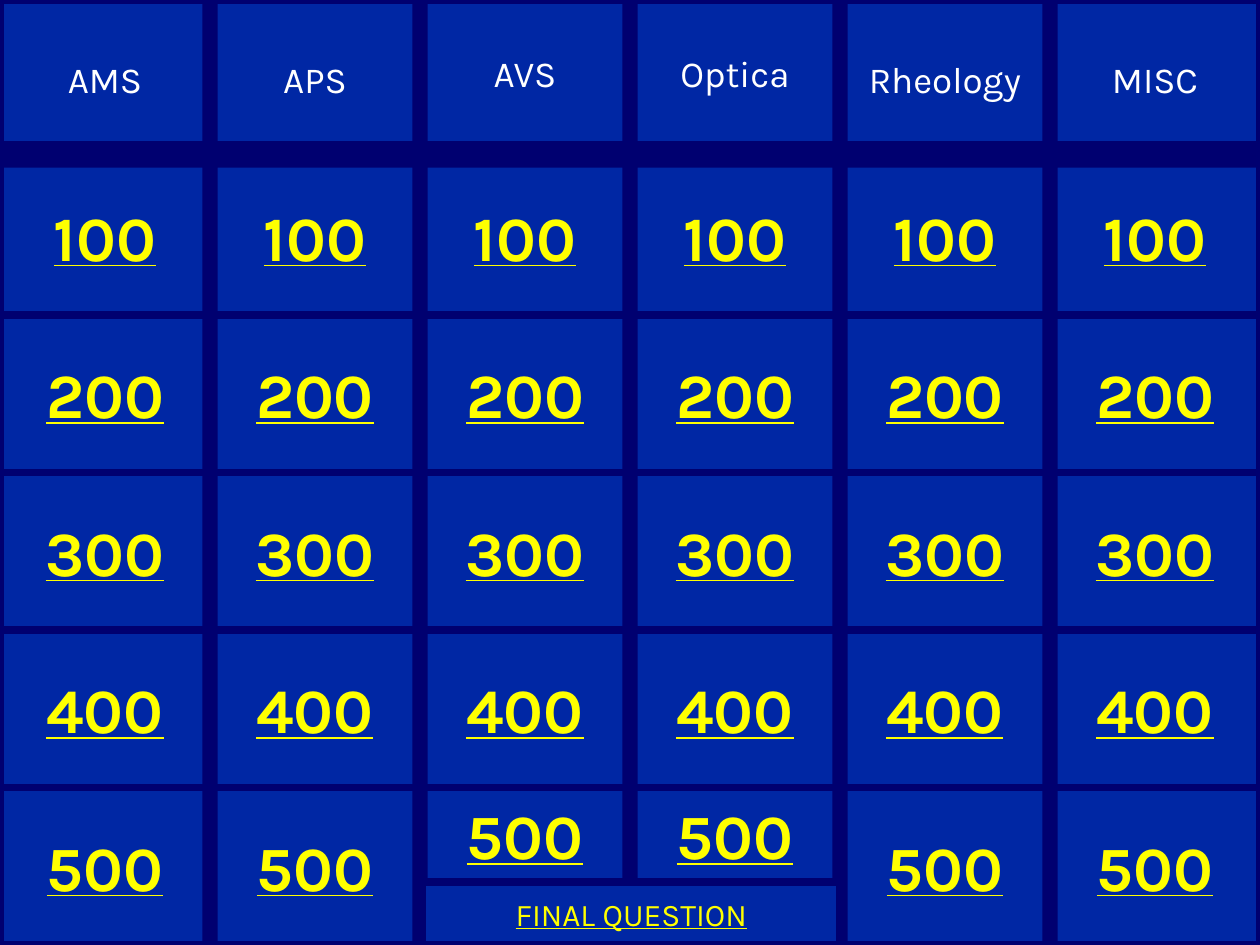
from dataclasses import dataclass

from pptx import Presentation
from pptx.dml.color import RGBColor
from pptx.enum.shapes import MSO_SHAPE as Shape
from pptx.enum.text import MSO_ANCHOR as Anchor, PP_ALIGN as Align
from pptx.util import Inches, Pt


@dataclass(frozen=True)
class Theme:
    background: str = "101C8A"
    tile: str = "0027A4"
    divider: str = "000070"
    heading: str = "FFFFFF"
    points: str = "FFFF00"
    font: str = "Karla"
    heading_size: int = 21
    points_size: int = 36
    final_size: int = 18
    border: float = 4.5


THEME = Theme()
WIDTH, HEIGHT = 10, 7.5
CATEGORIES = ["AMS", "APS", "AVS", "Optica", "Rheology", "MISC"]
POINTS = [100, 200, 300, 400, 500]
COLUMN = WIDTH / len(CATEGORIES)
ROW = HEIGHT / (len(POINTS) + 1)
FINAL_COLUMNS = (2, 3)
FINAL_HEIGHT = 0.5
HEADING_HEIGHTS = {2: 1.15, 3: 1.16}
GAP = 0.12

HEADING = {"size": Pt(THEME.heading_size), "bold": False, "underline": False}
POINTS_LINK = {"size": Pt(THEME.points_size), "bold": True, "underline": True}
FINAL_LINK = {"size": Pt(THEME.final_size), "bold": False, "underline": True}


def color(value):
    return RGBColor.from_string(value)


def add_block(slide, kind, box, fill, border=None):
    shape = slide.shapes.add_shape(kind, *(Inches(length) for length in box))
    shape.shadow.inherit = False
    shape.fill.solid()
    shape.fill.fore_color.rgb = color(fill)
    if border:
        shape.line.color.rgb = color(border)
        shape.line.width = Pt(THEME.border)
    else:
        shape.line.fill.background()
    return shape


def write_centered(shape, text, text_color, font_format):
    frame = shape.text_frame
    frame.word_wrap = False
    frame.vertical_anchor = Anchor.MIDDLE
    paragraph = frame.paragraphs[0]
    paragraph.alignment = Align.CENTER
    run = paragraph.add_run()
    run.text = text
    run.font.name = THEME.font
    run.font.color.rgb = color(text_color)
    for name, value in font_format.items():
        setattr(run.font, name, value)


def add_tile(slide, kind, box, text, text_color, font_format):
    tile = add_block(slide, kind, box, THEME.tile, THEME.divider)
    write_centered(tile, text, text_color, font_format)


def add_category(slide, box, category, heading_height, last_height):
    """Stack a heading and the point buttons; the last button may be shorter."""
    left, top, width, height = box
    row = height / (len(POINTS) + 1)
    add_tile(slide, Shape.RECTANGLE, (left, top, width, heading_height),
             category, THEME.heading, HEADING)
    for index, value in enumerate(POINTS, start=1):
        button_height = last_height if value == POINTS[-1] else row
        add_tile(slide, Shape.ACTION_BUTTON_CUSTOM,
                 (left, top + index * row, width, button_height),
                 str(value), THEME.points, POINTS_LINK)


def add_dividers(slide, box):
    """Cover the column seams and the seam below the headings."""
    left, top, width, height = box
    for index in range(1, len(CATEGORIES)):
        center = left + index * width / len(CATEGORIES)
        add_block(slide, Shape.RECTANGLE,
                  (center - GAP / 2, top, GAP, height), THEME.divider)
    add_block(slide, Shape.RECTANGLE, (left, top + 1.12, width, 0.21), THEME.divider)


def add_final_round(slide, box):
    left, top, width, height = box
    add_block(slide, Shape.RECTANGLE, box, THEME.tile, THEME.divider)
    label = slide.shapes.add_textbox(
        Inches(left + GAP / 2), Inches(top + 0.16), Inches(width - GAP), Inches(0.19))
    write_centered(label, "FINAL QUESTION", THEME.points, FINAL_LINK)


def add_board(slide, box):
    left, top, width, height = box
    for index, category in enumerate(CATEGORIES):
        last_height = ROW - FINAL_HEIGHT if index in FINAL_COLUMNS else ROW
        add_category(slide, (left + index * COLUMN, top, COLUMN, height),
                     category, HEADING_HEIGHTS.get(index, ROW), last_height)
    add_dividers(slide, box)
    add_final_round(slide, (left + FINAL_COLUMNS[0] * COLUMN + 0.02,
                            top + height - FINAL_HEIGHT,
                            len(FINAL_COLUMNS) * COLUMN - 0.02, FINAL_HEIGHT))


def main():
    presentation = Presentation()
    presentation.slide_width = Inches(WIDTH)
    presentation.slide_height = Inches(HEIGHT)
    slide = presentation.slides.add_slide(presentation.slide_layouts[6])
    slide.background.fill.solid()
    slide.background.fill.fore_color.rgb = color(THEME.background)
    add_board(slide, (0, 0, WIDTH, HEIGHT))
    presentation.save("out.pptx")


if __name__ == "__main__":
    main()
